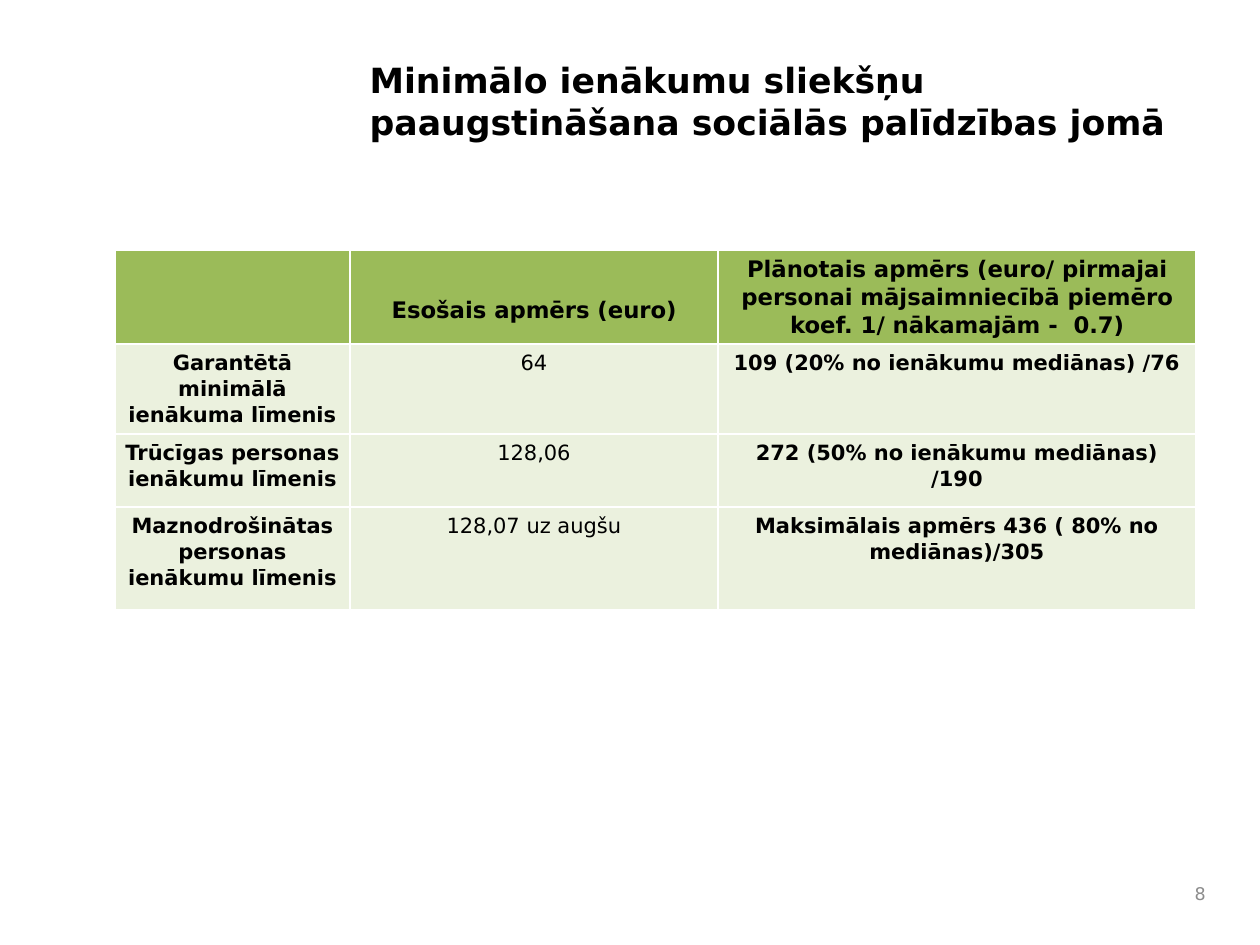
from lxml.etree import SubElement
from pptx import Presentation
from pptx.dml.color import RGBColor
from pptx.enum.text import MSO_ANCHOR, MSO_AUTO_SIZE, PP_ALIGN
from pptx.oxml.ns import qn
from pptx.util import Pt

SCALE = 914400 / 126
FONT = "DejaVu Sans"
COLORS = {"text": "000000", "header": "9BBB59", "body": "EBF1DE",
          "border": "FFFFFF", "number": "8C8C8C"}
COLUMN_WIDTHS = [235, 368, 478]
ROW_HEIGHTS = [94, 90, 73, 103]
ROWS = [
    ["", "Esošais apmērs (euro)",
     "Plānotais apmērs (euro/ pirmajai personai mājsaimniecībā piemēro koef. 1/ nākamajām -  0.7)"],
    ["Garantētā minimālā ienākuma līmenis", "64", "109 (20% no ienākumu mediānas) /76"],
    ["Trūcīgas personas ienākumu līmenis", "128,06", "272 (50% no ienākumu mediānas) /190"],
    ["Maznodrošinātas personas ienākumu līmenis", "128,07 uz augšu",
     "Maksimālais apmērs 436 ( 80% no mediānas)/305"],
]


def px(length):
    """Convert pixels to EMU."""
    return round(length * SCALE)


def style_text(frame, size, color, align, bold=False):
    """Format every paragraph and span of a text frame."""
    for para in frame.paragraphs:
        para.alignment = align
        para.font.size = Pt(size)
        for span in para.runs:
            span.font.name = FONT
            span.font.size = Pt(size)
            span.font.bold = bold
            span.font.color.rgb = RGBColor.from_string(COLORS[color])


def add_borders(cell):
    """Draw thin lines on all four sides of a cell, ahead of its fill."""
    properties = cell._tc.get_or_add_tcPr()
    for side in ("a:lnL", "a:lnR", "a:lnT", "a:lnB"):
        line = SubElement(properties, qn(side), w=str(Pt(1)))
        fill = SubElement(line, qn("a:solidFill"))
        SubElement(fill, qn("a:srgbClr"), val=COLORS["border"])


def add_title(page, left, top, width, height):
    """Place the heading in the title placeholder."""
    title = page.shapes.title
    title.left, title.top, title.width, title.height = map(px, (left, top, width, height))
    frame = title.text_frame
    frame.text = "Minimālo ienākumu sliekšņu paaugstināšana sociālās palīdzības jomā"
    frame.word_wrap = True
    frame.auto_size = MSO_AUTO_SIZE.NONE
    frame.vertical_anchor = MSO_ANCHOR.TOP
    style_text(frame, 19.8, "text", PP_ALIGN.LEFT, bold=True)


def fill_cell(cell, text, is_header, bold):
    """Write and format one table cell."""
    add_borders(cell)
    cell.fill.solid()
    cell.fill.fore_color.rgb = RGBColor.from_string(COLORS["header" if is_header else "body"])
    cell.margin_left = cell.margin_right = px(10)
    cell.margin_top = cell.margin_bottom = px(5)
    cell.text_frame.text = text
    cell.text_frame.paragraphs[0].line_spacing = 1.07
    style_text(cell.text_frame, 13 if is_header else 12, "text", PP_ALIGN.CENTER, bold)


def add_income_table(page, left, top):
    """Build the table of present and planned income thresholds."""
    table = page.shapes.add_table(len(ROWS), len(COLUMN_WIDTHS), px(left), px(top),
                                  px(sum(COLUMN_WIDTHS)), px(sum(ROW_HEIGHTS))).table
    for column, width in zip(table.columns, COLUMN_WIDTHS):
        column.width = px(width)
    for row, height in zip(table.rows, ROW_HEIGHTS):
        row.height = px(height)
    for row_index, texts in enumerate(ROWS):
        for column_index, text in enumerate(texts):
            is_header = row_index == 0
            fill_cell(table.cell(row_index, column_index), text, is_header,
                      bold=is_header or column_index != 1)
    table.cell(0, 1).margin_top = px(46)


def add_page_number(page, left, top, size):
    """Place the page number in a square box."""
    frame = page.shapes.add_textbox(px(left), px(top), px(size), px(size)).text_frame
    frame.word_wrap = True
    frame.vertical_anchor = MSO_ANCHOR.MIDDLE
    frame.text = "8"
    style_text(frame, 10, "number", PP_ALIGN.RIGHT)


def main():
    """Build and save the deck."""
    deck = Presentation()
    deck.slide_width, deck.slide_height = px(1260), px(945)
    page = deck.slides.add_slide(deck.slide_layouts[5])
    add_title(page, 357, 53, 840, 142)
    add_income_table(page, 115, 250)
    add_page_number(page, 1176, 872, 42)
    deck.save("out.pptx")


if __name__ == "__main__":
    main()
